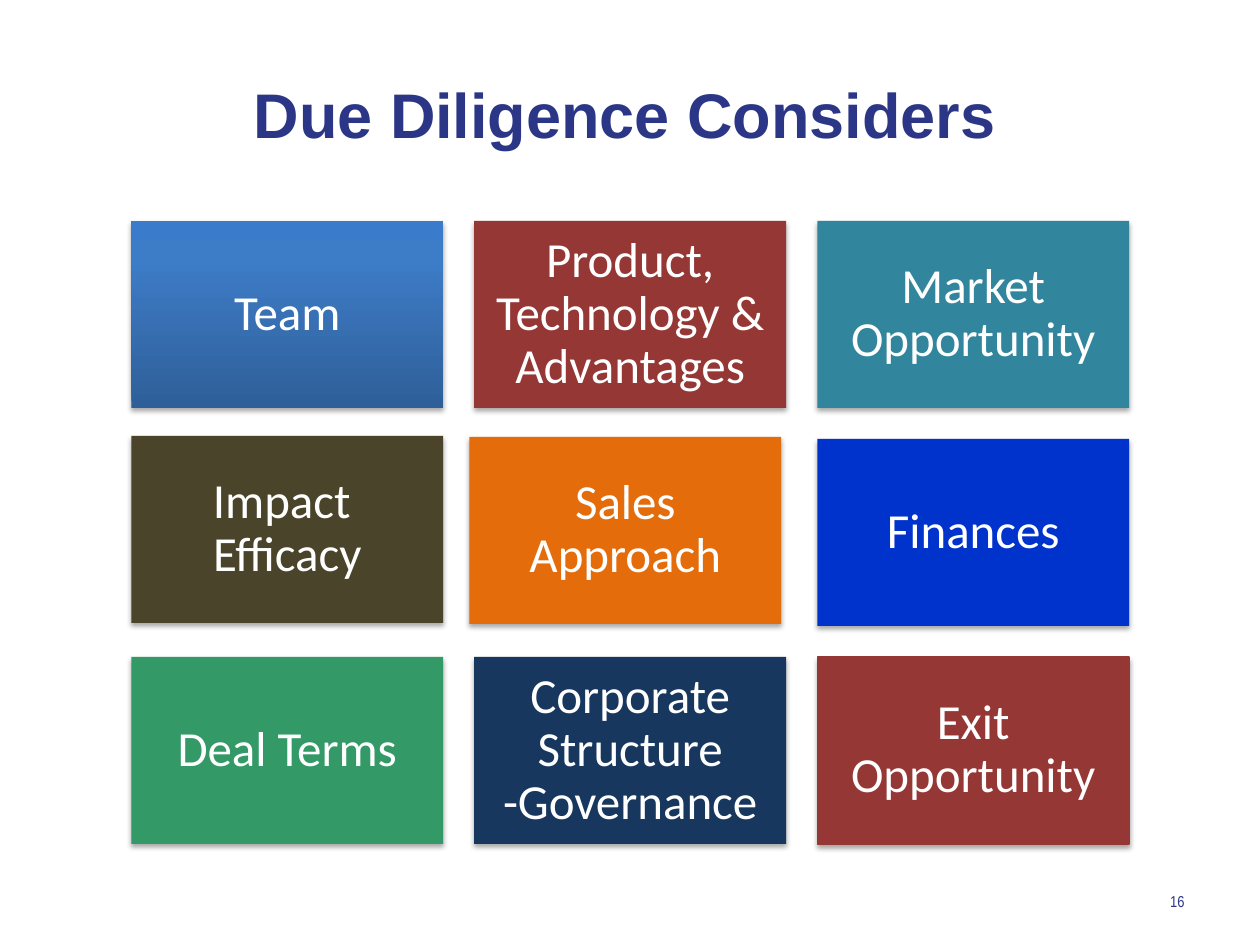
from copy import deepcopy
from dataclasses import dataclass

from lxml import etree
from pptx import Presentation
from pptx.dml.color import RGBColor
from pptx.enum.shapes import MSO_SHAPE
from pptx.enum.text import MSO_ANCHOR, PP_ALIGN
from pptx.oxml.ns import qn
from pptx.util import Pt

RECT = MSO_SHAPE.RECTANGLE
MIDDLE = MSO_ANCHOR.MIDDLE
CENTER, RIGHT = PP_ALIGN.CENTER, PP_ALIGN.RIGHT


@dataclass(frozen=True)
class Theme:
    navy: str = "2B3686"
    white: str = "FFFFFF"
    blue: tuple = ((0, "2F5F99"), (0.8, "3D7CC7"), (1, "3A7CCB"))
    red: str = "953735"
    teal: str = "31859C"
    olive: str = "4A452A"
    orange: str = "E46C0A"
    royal: str = "0033CC"
    green: str = "339966"
    deep: str = "17375E"
    title_font: str = "Arial"
    tile_font: str = "Calibri"
    number_font: str = "Arial Narrow"
    title_size: int = 36
    tile_size: int = 28
    number_size: int = 9


def write(tf, text, *, size, font, color, align=CENTER, bold=False,
          spacing=None, inset=7.2):
    """Write one paragraph, anchored in the middle of its frame."""
    tf.word_wrap = True
    tf.vertical_anchor = MIDDLE
    tf.margin_left = tf.margin_right = Pt(7.2)
    tf.margin_top = tf.margin_bottom = Pt(inset)
    p = tf.paragraphs[0]
    p.text = text
    p.alignment = align
    if spacing:
        p.line_spacing = spacing
    for r in p.runs:
        r.font.size, r.font.name, r.font.bold = Pt(size), font, bold
        r.font.color.rgb = RGBColor.from_string(color)


class Deck:
    def __init__(self, theme):
        self.theme = theme
        self.prs = Presentation()
        self.prs.slide_width, self.prs.slide_height = Pt(720), Pt(540)
        self.s = self.prs.slides.add_slide(self.prs.slide_layouts[5])

    def title(self, text, x, y, w, h):
        t, sp = self.theme, self.s.shapes.title
        sp.left, sp.top, sp.width, sp.height = Pt(x), Pt(y), Pt(w), Pt(h)
        write(sp.text_frame, text, size=t.title_size, font=t.title_font,
              color=t.navy, bold=True, inset=3.6)

    def tile(self, text, fill, x, y, w, h, line=None):
        t = self.theme
        sp = self.s.shapes.add_shape(RECT, Pt(x), Pt(y), Pt(w), Pt(h))
        if isinstance(fill, tuple):
            self.gradient(sp, fill)
        else:
            sp.fill.solid()
            sp.fill.fore_color.rgb = RGBColor.from_string(fill)
        if line:
            sp.line.color.rgb = RGBColor.from_string(line)
            sp.line.width = Pt(0.75)
        else:
            sp.line.fill.background()
        self.shadow(sp)
        write(sp.text_frame, text, size=t.tile_size, font=t.tile_font,
              color=t.white, spacing=0.9)

    def gradient(self, sp, stops):
        """Fill upwards, from the first stop at the bottom edge."""
        sp.fill.gradient()
        sp.fill.gradient_angle = 90
        gs_list = sp.fill.gradient_stops[0]._gs.getparent()
        gs_list.append(deepcopy(gs_list[0]))
        for stop, (position, color) in zip(sp.fill.gradient_stops, stops):
            stop.position = position
            stop.color.rgb = RGBColor.from_string(color)

    def shadow(self, sp):
        sp.shadow.inherit = False
        effects = sp._element.spPr.find(qn("a:effectLst"))
        outer = etree.SubElement(effects, qn("a:outerShdw"), blurRad=str(Pt(3.1)),
                                 dist=str(Pt(1.8)), dir="5400000", rotWithShape="0")
        color = etree.SubElement(outer, qn("a:srgbClr"), val="000000")
        etree.SubElement(color, qn("a:alpha"), val="35000")

    def number(self, text, x, y, w, h):
        t = self.theme
        sp = self.s.shapes.add_textbox(Pt(x), Pt(y), Pt(w), Pt(h))
        write(sp.text_frame, text, size=t.number_size, font=t.number_font,
              color=t.navy, align=RIGHT, inset=3.6)


def main():
    t = Theme()
    deck = Deck(t)
    deck.title("Due Diligence Considers", 0, 20, 714, 90)

    # Tiles by row: text, fill, then small shifts from the grid
    rows = (
        (("Team", t.blue, 0, 0),
         ("Product, Technology & Advantages", t.red, 0, 0),
         ("Market Opportunity", t.teal, 0, 0)),
        (("Impact \vEfficacy", t.olive, 0, -1.7),
         ("Sales Approach", t.orange, -2.8, -1.1),
         ("Finances", t.royal, 0, 0)),
        (("Deal Terms", t.green, 0, 0),
         ("Corporate Structure -Governance", t.deep, 0, 0),
         ("Exit Opportunity", t.red, 0, 0)),
    )
    left, top, width, height = 75, 126.2, 178.2, 106.9
    pitch_x, pitch_y = 196, 124.6
    for i, row in enumerate(rows):
        for j, (text, fill, dx, dy) in enumerate(row):
            deck.tile(text, fill, left + j * pitch_x + dx, top + i * pitch_y + dy,
                      width, height, line=t.red if i == j == 2 else None)

    # Slide number
    deck.number("16", 642, 500.4, 42, 28.8)
    deck.prs.save("out.pptx")


if __name__ == "__main__":
    main()
